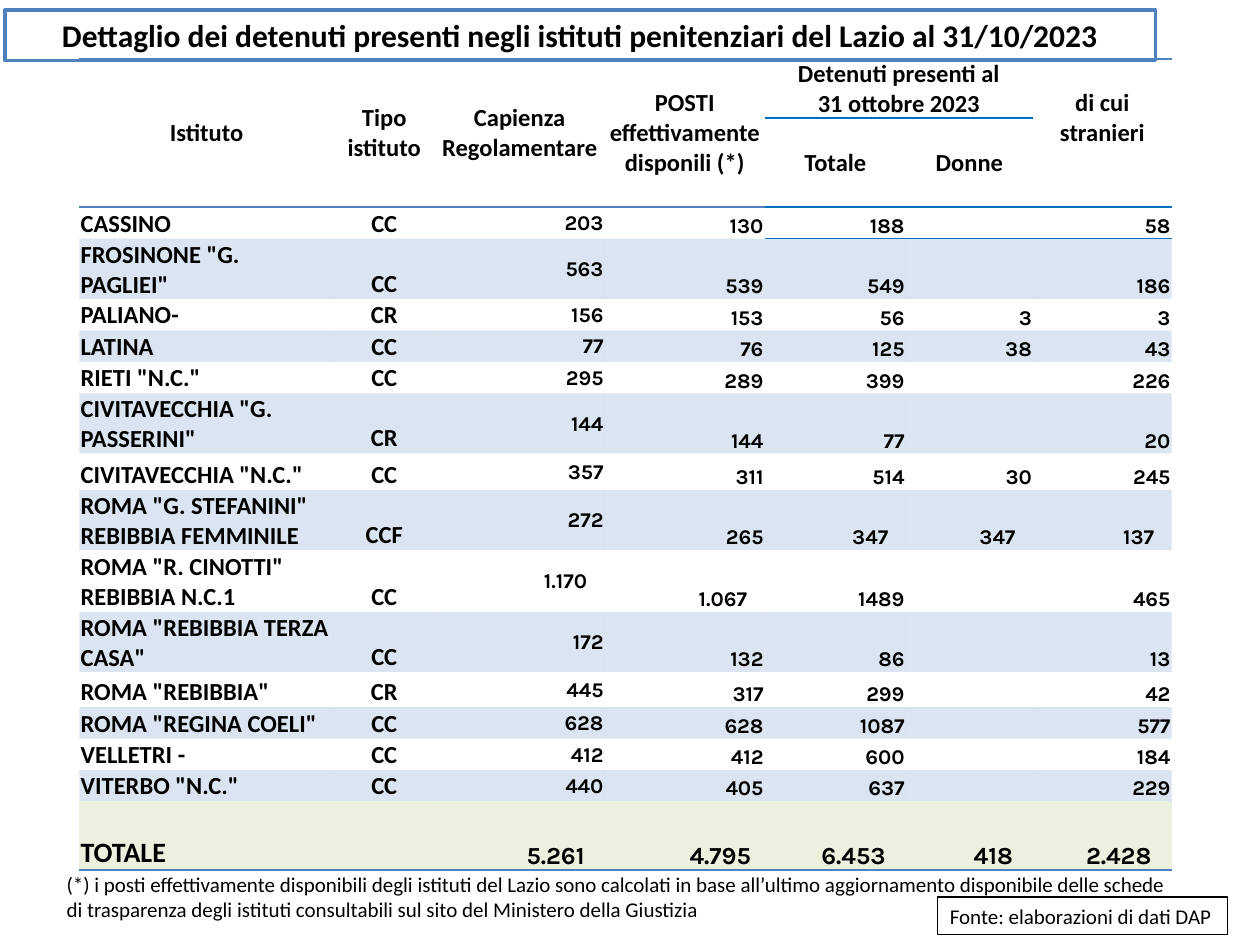
from lxml import etree
from pptx import Presentation
from pptx.dml.color import RGBColor
from pptx.enum.text import MSO_ANCHOR, MSO_AUTO_SIZE, PP_ALIGN
from pptx.oxml.ns import qn
from pptx.util import Inches, Pt

LEFT, CENTER, RIGHT = PP_ALIGN.LEFT, PP_ALIGN.CENTER, PP_ALIGN.RIGHT
TOP, MIDDLE, BOTTOM = MSO_ANCHOR.TOP, MSO_ANCHOR.MIDDLE, MSO_ANCHOR.BOTTOM
FIXED_SIZE, FIT_SHAPE = MSO_AUTO_SIZE.NONE, MSO_AUTO_SIZE.SHAPE_TO_FIT_TEXT

BLACK = RGBColor(0x00, 0x00, 0x00)
WHITE = RGBColor(0xFF, 0xFF, 0xFF)
BLUE = RGBColor(0x4F, 0x81, 0xBD)
BRIGHT_BLUE = RGBColor(0x00, 0x70, 0xC0)
PALE_GREEN = RGBColor(0xEB, 0xF1, 0xDE)
PLAIN_TABLE_STYLE = "{2D5ABB26-0587-4C30-8999-92F81FD0307C}"

TITLE = "Dettaglio dei detenuti presenti negli istituti penitenziari del Lazio al 31/10/2023"
NOTE = (
    "(*) i posti effettivamente disponibili degli istituti del Lazio sono calcolati "
    "in base all’ultimo aggiornamento disponibile delle schede di trasparenza degli "
    "istituti consultabili sul sito del Ministero della Giustizia"
)
SOURCE = "Fonte: elaborazioni di dati DAP"

HEADERS = [
    (0, 0, ["Istituto"]),
    (0, 1, ["Tipo istituto"]),
    (0, 2, ["Capienza", "Regolamentare"]),
    (0, 3, ["POSTI", "effettivamente disponili (*)"]),
    (0, 4, ["Detenuti presenti al", "31 ottobre 2023"]),
    (0, 6, ["di cui", "stranieri"]),
    (1, 4, ["Totale"]),
    (1, 5, ["Donne"]),
]
PRISONS = [
    ("CASSINO", "CC", "203", "130", "188", "", "58"),
    ('FROSINONE "G. PAGLIEI"', "CC", "563", "539", "549", "", "186"),
    ("PALIANO-", "CR", "156", "153", "56", "3", "3"),
    ("LATINA", "CC", "77", "76", "125", "38", "43"),
    ('RIETI "N.C."', "CC", "295", "289", "399", "", "226"),
    ('CIVITAVECCHIA "G. PASSERINI"', "CR", "144", "144", "77", "", "20"),
    ('CIVITAVECCHIA "N.C."', "CC", "357", "311", "514", "30", "245"),
    ('ROMA "G. STEFANINI" REBIBBIA FEMMINILE', "CCF", "272", "265", "347", "347", "137"),
    ('ROMA "R. CINOTTI" REBIBBIA N.C.1', "CC", "1.170", "1.067", "1489", "", "465"),
    ('ROMA "REBIBBIA TERZA CASA"', "CC", "172", "132", "86", "", "13"),
    ('ROMA "REBIBBIA"', "CR", "445", "317", "299", "", "42"),
    ('ROMA "REGINA COELI"', "CC", "628", "628", "1087", "", "577"),
    ("VELLETRI -", "CC", "412", "412", "600", "", "184"),
    ('VITERBO "N.C."', "CC", "440", "405", "637", "", "229"),
]
TOTALS = ("TOTALE", "", "5.261", "4.795", "6.453", "418", "2.428")
RIGHT_INDENTS = {"347": 0.14, "137": 0.14, "1.170": 0.14, "1.067": 0.14,
                 "5.261": 0.16, "4.795": 0.11, "6.453": 0.16, "418": 0.16, "2.428": 0.16}

COLUMN_WIDTHS = [2.02, 0.8, 1.35, 1.27, 1.12, 1.01, 1.1]
ROW_HEIGHTS = [0.45, 0.43, 0.25, 0.38, 0.25, 0.25, 0.25, 0.46, 0.29,
               0.46, 0.49, 0.46, 0.28, 0.25, 0.25, 0.24, 0.55]
FIRST_PRISON_ROW = 2
TOTAL_ROW = len(ROW_HEIGHTS) - 1


def write(para, text, size, font="Calibri", bold=True, align=LEFT):
    para.alignment = align
    span = para.add_run()
    span.text = text
    span.font.size = Pt(size)
    span.font.name = font
    span.font.bold = bold
    span.font.color.rgb = BLACK


def set_margins(cell, left, top, right, bottom):
    cell.margin_left, cell.margin_top = Inches(left), Inches(top)
    cell.margin_right, cell.margin_bottom = Inches(right), Inches(bottom)


def add_border(cell, side, color):
    properties = cell._tc.get_or_add_tcPr()
    line = etree.SubElement(properties, qn(f"a:ln{side}"), w=str(Pt(1)))
    fill = etree.SubElement(line, qn("a:solidFill"))
    etree.SubElement(fill, qn("a:srgbClr"), val=str(color))


def tint_cell(cell):
    cell.fill.solid()
    cell.fill.fore_color.rgb = BLUE
    color = cell._tc.tcPr.find(qn("a:solidFill")).find(qn("a:srgbClr"))
    etree.SubElement(color, qn("a:alpha"), val="20000")


def format_cell(cell, row, column):
    header_color = BLUE if column < 4 else BRIGHT_BLUE
    if row == 0:
        add_border(cell, "T", BLUE)
    elif row <= FIRST_PRISON_ROW and column >= 4:
        add_border(cell, "T", BRIGHT_BLUE)
    if row < FIRST_PRISON_ROW or (row == FIRST_PRISON_ROW and column >= 4):
        add_border(cell, "B", header_color)
    elif row == TOTAL_ROW:
        add_border(cell, "B", BLUE)

    if row == TOTAL_ROW:
        cell.fill.solid()
        cell.fill.fore_color.rgb = PALE_GREEN
    elif row > FIRST_PRISON_ROW and row % 2:
        tint_cell(cell)
    else:
        cell.fill.background()


def fill_data_cell(cell, text, row, column):
    total = row == TOTAL_ROW
    set_margins(cell, 0.01, 0.01, RIGHT_INDENTS.get(text, 0.01), 0)
    cell.vertical_anchor = MIDDLE if column == 2 and not total else BOTTOM
    para = cell.text_frame.paragraphs[0]
    if not text:
        etree.SubElement(para._p, qn("a:endParaRPr"), sz="1200")
        return
    size, font = (14, "Calibri") if column < 2 else (12, "Karla")
    align = (LEFT, CENTER)[column] if column < 2 else RIGHT
    write(para, text, size + 2 * total, font, align=align)


def add_table(page):
    frame = page.shapes.add_table(
        len(ROW_HEIGHTS), len(COLUMN_WIDTHS), Inches(0.63), Inches(0.47),
        Inches(sum(COLUMN_WIDTHS)), Inches(sum(ROW_HEIGHTS)))
    next(frame.element.iter(qn("a:tableStyleId"))).text = PLAIN_TABLE_STYLE
    table = frame.table
    table.first_row = table.horz_banding = False
    for column, width in zip(table.columns, COLUMN_WIDTHS):
        column.width = Inches(width)
    for row, height in enumerate(ROW_HEIGHTS):
        table.rows[row].height = Inches(height)
        for column in range(len(COLUMN_WIDTHS)):
            cell = table.cell(row, column)
            set_margins(cell, 0, 0, 0, 0)
            format_cell(cell, row, column)

    for column in (0, 1, 2, 3, 6):
        table.cell(0, column).merge(table.cell(1, column))
    table.cell(0, 4).merge(table.cell(0, 5))
    for row, column, lines in HEADERS:
        cell = table.cell(row, column)
        cell.vertical_anchor = MIDDLE
        if column == 6:
            cell.margin_bottom = Inches(0.24)
        for index, line in enumerate(lines):
            frame = cell.text_frame
            para = frame.add_paragraph() if index else frame.paragraphs[0]
            write(para, line, 14, align=CENTER)
    for row, values in enumerate(PRISONS + [TOTALS], FIRST_PRISON_ROW):
        for column, text in enumerate(values):
            fill_data_cell(table.cell(row, column), text, row, column)


def fill_box(box, text, size, bold=False, align=LEFT, wrap=True, fit=FIT_SHAPE):
    frame = box.text_frame
    frame.word_wrap = wrap
    frame.auto_size = fit
    frame.vertical_anchor = TOP
    write(frame.paragraphs[0], text, size, bold=bold, align=align)


def outline_box(box, color, width):
    box.fill.solid()
    box.fill.fore_color.rgb = WHITE
    box.line.color.rgb = color
    box.line.width = Pt(width)


def main():
    deck = Presentation()
    deck.slide_width, deck.slide_height = Inches(10), Inches(7.5)
    page = deck.slides.add_slide(deck.slide_layouts[5])

    title = page.shapes.title
    title.left, title.top = Inches(0.04), Inches(0.08)
    title.width, title.height = Inches(9.13), Inches(0.4)
    outline_box(title, BLUE, 2)
    fill_box(title, TITLE, 18, bold=True, align=CENTER, fit=FIXED_SIZE)

    note = page.shapes.add_textbox(Inches(0.43), Inches(6.87), Inches(9.06), Inches(0.5))
    fill_box(note, NOTE, 12)

    source = page.shapes.add_textbox(Inches(7.44), Inches(7.12), Inches(2.3), Inches(0.3))
    outline_box(source, BLACK, 0.75)
    fill_box(source, SOURCE, 12, wrap=False)

    add_table(page)
    deck.save("out.pptx")


if __name__ == "__main__":
    main()
